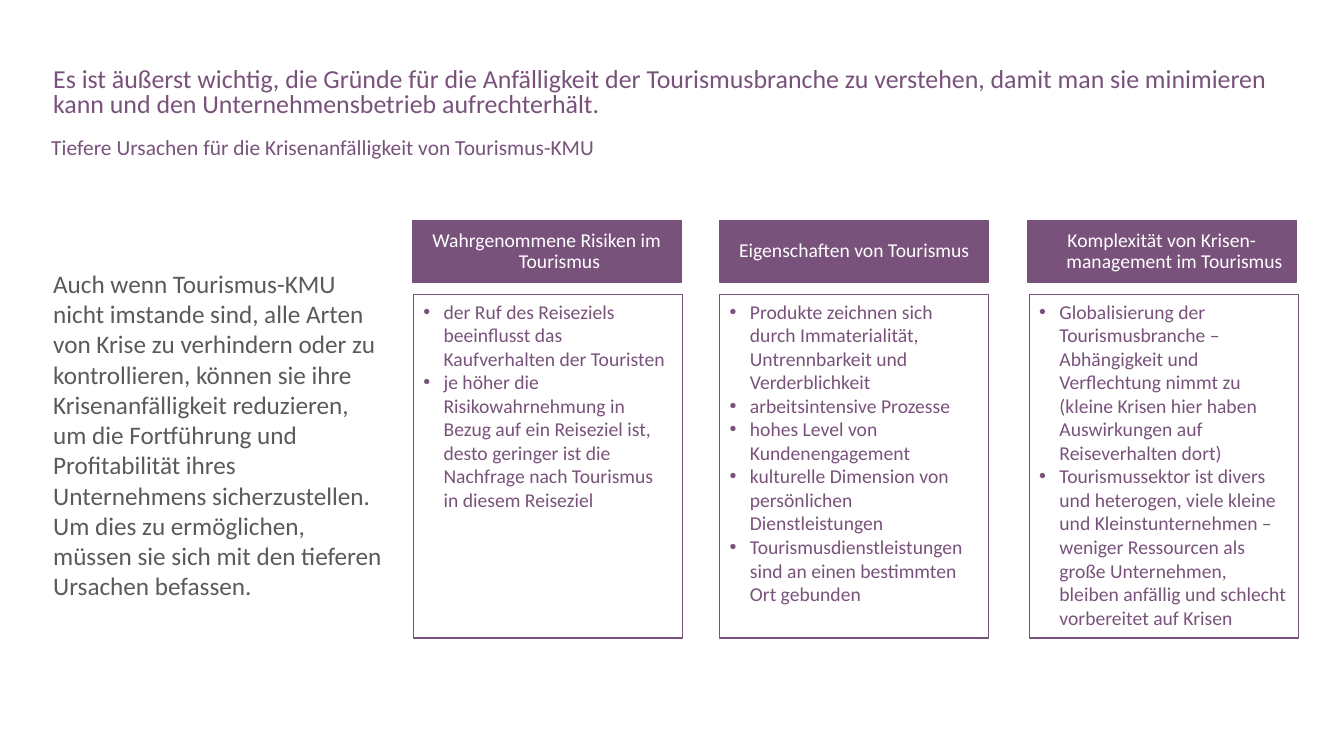
import dataclasses
import pptx
import pptx.util
import pptx.dml.color
import pptx.enum.shapes
import pptx.enum.text
import pptx.oxml
import pptx.oxml.ns

Cm, Pt = pptx.util.Cm, pptx.util.Pt
Rgb = pptx.dml.color.RGBColor
Align, Mid = pptx.enum.text.PP_ALIGN, pptx.enum.text.MSO_ANCHOR

HEAD = (
    "Es ist äußerst wichtig, die Gründe für die Anfälligkeit der Tourismusbranche "
    "zu verstehen, damit man sie minimieren kann und den Unternehmensbetrieb "
    "aufrechterhält."
)
SUB = "Tiefere Ursachen für die Krisenanfälligkeit von Tourismus-KMU"
LEAD = (
    "Auch wenn Tourismus-KMU nicht imstande sind, alle Arten von Krise zu verhindern "
    "oder zu kontrollieren, können sie ihre Krisenanfälligkeit reduzieren, um die "
    "Fortführung und Profitabilität ihres Unternehmens sicherzustellen. Um dies zu "
    "ermöglichen, müssen sie sich mit den tieferen Ursachen befassen."
)
# Heading, sideways shift of the list box in cm, list items
CARDS = [
    ("Wahrgenommene Risiken im Tourismus", 0.03, [
        "der Ruf des Reiseziels beeinflusst das Kaufverhalten der Touristen",
        "je höher die Risikowahrnehmung in Bezug auf ein Reiseziel ist, desto "
        "geringer ist die Nachfrage nach Tourismus in diesem Reiseziel",
    ]),
    ("Eigenschaften von Tourismus", 0, [
        "Produkte zeichnen sich durch Immaterialität, Untrennbarkeit und "
        "Verderblichkeit",
        "arbeitsintensive Prozesse",
        "hohes Level von Kundenengagement",
        "kulturelle Dimension von persönlichen Dienstleistungen",
        "Tourismusdienstleistungen sind an einen bestimmten Ort gebunden",
    ]),
    ("Komplexität von Krisen-management im Tourismus", 0.05, [
        "Globalisierung der Tourismusbranche – Abhängigkeit und Verflechtung nimmt "
        "zu (kleine Krisen hier haben Auswirkungen auf Reiseverhalten dort)",
        "Tourismussektor ist divers und heterogen, viele kleine und "
        "Kleinstunternehmen – weniger Ressourcen als große Unternehmen, bleiben "
        "anfällig und schlecht vorbereitet auf Krisen",
    ]),
]


@dataclasses.dataclass(frozen=True)
class Theme:
    font: str = "Calibri"
    plum: str = "79527B"
    grey: str = "595A59"
    white: str = "FFFFFF"
    head: float = 18.5
    sub: float = 15.3
    lead: float = 18
    card: float = 14


THEME = Theme()
LEFT, PITCH, WIDTH = 10.39, 7.75, 6.78
HEAD_TOP, HEAD_HIGH = 5.56, 1.55
LIST_TOP, LIST_HIGH = 7.42, 8.66


def write(shape, texts, size, color, anchor=Mid.TOP, align=Align.LEFT,
          space=1.0, hang=0, dots=False):
    """Fill a shape with paragraphs; hang is the hanging indent in cm."""
    frame = shape.text_frame
    frame.word_wrap = True
    frame.auto_size = pptx.enum.text.MSO_AUTO_SIZE.NONE
    frame.vertical_anchor = anchor
    frame.margin_left = frame.margin_right = Cm(0.25)
    frame.margin_top = frame.margin_bottom = Cm(0.13)
    for i, text in enumerate(texts):
        para = frame.paragraphs[0] if i == 0 else frame.add_paragraph()
        para.alignment = align
        para.line_spacing = space
        para.space_before = para.space_after = Pt(0)
        props = para._p.get_or_add_pPr()
        props.set("marL", str(Cm(hang)))
        props.set("indent", str(-Cm(hang)))
        add_dot(props, color) if dots else add_mark(props, "<a:buNone %s/>")
        run = para.add_run()
        run.text = text
        run.font.name = THEME.font
        run.font.size = Pt(size)
        run.font.color.rgb = Rgb.from_string(color)


def add_mark(props, xml):
    props.append(pptx.oxml.parse_xml(xml % pptx.oxml.ns.nsdecls("a")))


def add_dot(props, color):
    add_mark(props, '<a:buClr %s><a:srgbClr val="' + color + '"/></a:buClr>')
    add_mark(props, '<a:buFont %s typeface="Arial"/>')
    add_mark(props, '<a:buChar %s char="•"/>')


def place(shape, left, top, width, height):
    shape.left, shape.top = Cm(left), Cm(top)
    shape.width, shape.height = Cm(width), Cm(height)


def add_box(slide, left, top, height, fill):
    kind = pptx.enum.shapes.MSO_SHAPE.RECTANGLE
    box = slide.shapes.add_shape(kind, Cm(left), Cm(top), Cm(WIDTH), Cm(height))
    box.shadow.inherit = False
    box.fill.solid()
    box.fill.fore_color.rgb = Rgb.from_string(fill)
    box.line.color.rgb = Rgb.from_string(THEME.plum)
    box.line.width = Pt(1)
    return box


def main():
    deck = pptx.Presentation()
    deck.slide_width, deck.slide_height = Cm(33.87), Cm(19.05)
    slide = deck.slides.add_slide(deck.slide_layouts.get_by_name("Two Content"))
    title, sub, lead = slide.placeholders

    place(title, 1.09, 1.6, 31.85, 1.63)
    write(title, [HEAD], THEME.head, THEME.plum, space=0.8)
    place(sub, 1.04, 3.43, 31.9, 0.71)
    write(sub, [SUB], THEME.sub, THEME.plum, space=0.7)
    place(lead, 1.09, 4.55, 8.86, 12.8)
    write(lead, [LEAD], THEME.lead, THEME.grey, anchor=Mid.MIDDLE)

    for i, (name, shift, items) in enumerate(CARDS):
        left = LEFT + i * PITCH
        head = add_box(slide, left, HEAD_TOP, HEAD_HIGH, THEME.plum)
        write(head, [name], THEME.card, THEME.white, anchor=Mid.MIDDLE,
              align=Align.CENTER, space=0.9, hang=0.64)
        body = add_box(slide, left + shift, LIST_TOP, LIST_HIGH, THEME.white)
        write(body, items, THEME.card, THEME.plum, hang=0.51, dots=True)

    deck.save("out.pptx")


if __name__ == "__main__":
    main()
